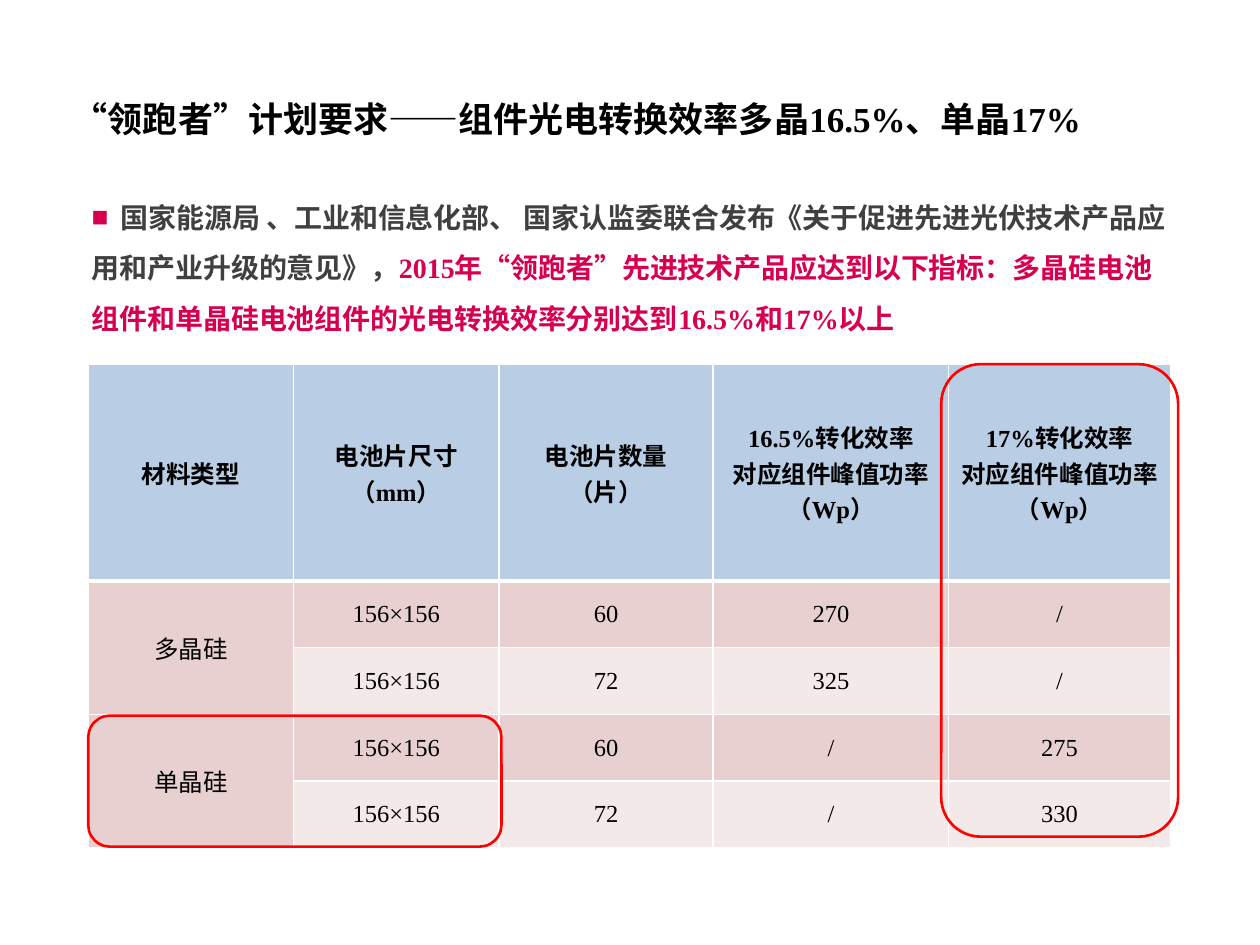
import pptx
import pptx.util
import pptx.dml.color
import pptx.enum.lang
import pptx.enum.shapes
import pptx.enum.text
import pptx.oxml
import pptx.oxml.ns

Inches = pptx.util.Inches
Pt = pptx.util.Pt

THEME = {
    "font": "Times New Roman",
    "black": "000000", "grey": "404040", "accent": "D70050",
    "head": "B9CDE5", "band": ("E8D0D0", "F4E9E9"),
    "border": "FFFFFF", "frame": "FF0000",
    "title_size": 20, "body_size": 16, "table_size": 14,
}

TITLE = "“领跑者”计划要求——组件光电转换效率多晶16.5%、单晶17%"
BODY = [
    ("\t国家能源局 、工业和信息化部、 国家认监委联合发布《关于促进先进光伏技术产品应用和产业升级的意见》，", "grey"),
    ("2015年“领跑者”先进技术产品应达到以下指标：多晶硅电池组件和单晶硅电池组件的光电转换效率分别达到16.5%和17%以上", "accent"),
]
ROWS = [
    (["材料类型"], ["电池片尺寸（mm）"], ["电池片数量", "（片）"],
     ["16.5%转化效率", "对应组件峰值功率（Wp）"],
     ["17%转化效率", "对应组件峰值功率（Wp）"]),
    (["多晶硅"], ["156×156"], ["60"], ["270"], ["/"]),
    (None, ["156×156"], ["72"], ["325"], ["/"]),
    (["单晶硅"], ["156×156"], ["60"], ["/"], ["275"]),
    (None, ["156×156"], ["72"], ["/"], ["330"]),
]
COL_WIDTHS = [1.63, 1.63, 1.7, 1.87, 1.76]
ROW_HEIGHTS = [1.72] + [0.53] * 4
TABLE_AT = (0.7, 2.89)
FRAMES = [(7.47, 2.89, 1.88, 3.75), (0.7, 5.68, 3.28, 1.04)]


def rgb(value):
    return pptx.dml.color.RGBColor.from_string(value)


def add_run(p, text, size, color, bold=True):
    r = p.add_run()
    r.text = text
    r.font.name = THEME["font"]
    r.font.size = Pt(size)
    r.font.bold = bold
    r.font.color.rgb = rgb(color)
    r.font.language_id = pptx.enum.lang.MSO_LANGUAGE_ID.SIMPLIFIED_CHINESE


def add_text_box(s, *at):
    tf = s.shapes.add_textbox(*map(Inches, at)).text_frame
    tf.word_wrap = True
    return tf


def add_xml(parent, xml):
    ns = pptx.oxml.ns.nsdecls("a")
    parent.append(pptx.oxml.parse_xml(xml.replace(">", f" {ns}>", 1)))


def set_borders(cell, top, bottom):
    for side, width in (("L", 1), ("R", 1), ("T", top), ("B", bottom)):
        add_xml(cell._tc.get_or_add_tcPr(),
                f'<a:ln{side} w="{Pt(width)}"><a:solidFill><a:srgbClr val="{THEME["border"]}"/>'
                f'</a:solidFill></a:ln{side}>')


def add_title(s):
    tf = add_text_box(s, 0.48, 0.72, 9.28, 0.44)
    tf.vertical_anchor = pptx.enum.text.MSO_ANCHOR.MIDDLE
    add_run(tf.paragraphs[0], TITLE, THEME["title_size"], THEME["black"])


def add_body(s):
    p = add_text_box(s, 0.63, 1.41, 8.83, 1.56).paragraphs[0]
    p.line_spacing = 1.5
    pPr = p._p.get_or_add_pPr()
    pPr.set("marL", "0")
    pPr.set("indent", "0")
    add_xml(pPr, f'<a:buClr><a:srgbClr val="{THEME["accent"]}"/></a:buClr>')
    add_xml(pPr, '<a:buFont typeface="Arial"></a:buFont>')
    add_xml(pPr, '<a:buChar char="■"></a:buChar>')
    add_xml(pPr, f'<a:tabLst><a:tab pos="{Inches(0.23)}" algn="l"/></a:tabLst>')
    for text, color in BODY:
        add_run(p, text, THEME["body_size"], THEME[color])


def fill_cell(cell, i, lines):
    header = i == 0
    set_borders(cell, 3 if i == 1 else 1, 3 if header else 1)
    cell.fill.solid()
    cell.fill.fore_color.rgb = rgb(THEME["head"] if header else THEME["band"][(i - 1) % 2])
    cell.vertical_anchor = pptx.enum.text.MSO_ANCHOR.MIDDLE
    cell.margin_left = cell.margin_right = Inches(0.08)
    cell.margin_top = cell.margin_bottom = Inches(0.04)
    tf = cell.text_frame
    for n, line in enumerate(lines or []):
        p = tf.add_paragraph() if n else tf.paragraphs[0]
        p.alignment = pptx.enum.text.PP_ALIGN.CENTER
        add_run(p, line, THEME["table_size"], THEME["black"], header)


def add_efficiency_table(s):
    size = (sum(COL_WIDTHS), sum(ROW_HEIGHTS))
    table = s.shapes.add_table(len(ROWS), len(COL_WIDTHS),
                               *map(Inches, TABLE_AT + size)).table
    for col, width in zip(table.columns, COL_WIDTHS):
        col.width = Inches(width)
    for row, height in zip(table.rows, ROW_HEIGHTS):
        row.height = Inches(height)
    for i, row in enumerate(ROWS):
        for j, lines in enumerate(row):
            fill_cell(table.cell(i, j), i, lines)
            if lines is None:
                table.cell(i - 1, j).merge(table.cell(i, j))


def add_frame(s, at):
    sp = s.shapes.add_shape(pptx.enum.shapes.MSO_SHAPE.ROUNDED_RECTANGLE, *map(Inches, at))
    sp.shadow.inherit = False
    sp.fill.background()
    sp.line.color.rgb = rgb(THEME["frame"])
    sp.line.width = Pt(1.5)


def main():
    prs = pptx.Presentation()
    prs.slide_width, prs.slide_height = Inches(10), Inches(7.5)
    s = prs.slides.add_slide(prs.slide_layouts[6])
    add_body(s)
    add_efficiency_table(s)
    for at in FRAMES:
        add_frame(s, at)
    add_title(s)
    prs.save("out.pptx")


if __name__ == "__main__":
    main()
